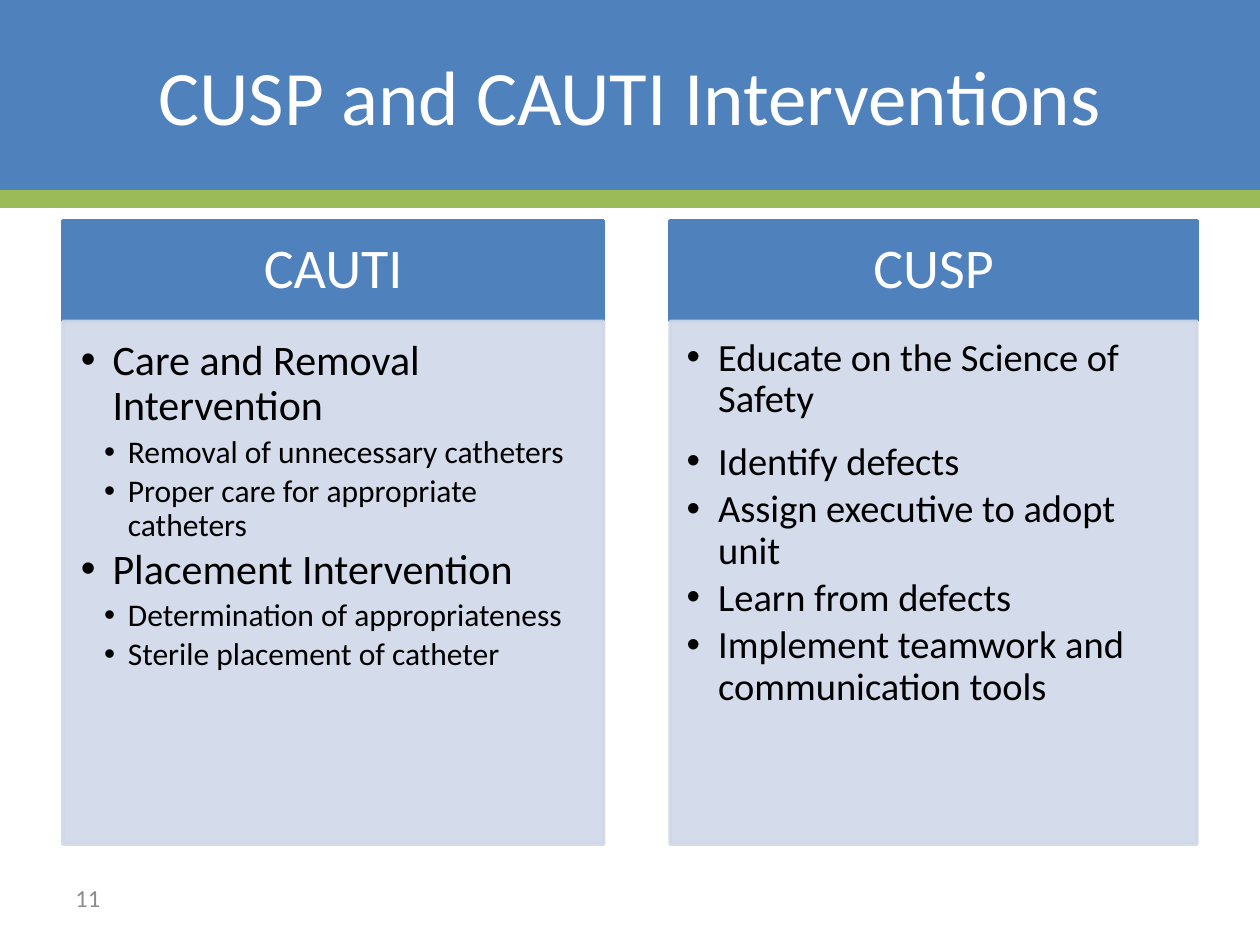
from dataclasses import dataclass

from lxml.etree import SubElement
from pptx import Presentation
from pptx.dml.color import RGBColor
from pptx.enum.shapes import MSO_CONNECTOR, MSO_SHAPE
from pptx.enum.text import MSO_ANCHOR, PP_ALIGN
from pptx.oxml.ns import qn
from pptx.util import Cm, Pt


@dataclass(frozen=True)
class Theme:
    font: str = "Calibri"
    blue: str = "4F81BD"
    green: str = "9BBB59"
    pale: str = "D0D8E8"
    white: str = "FFFFFF"
    black: str = "000000"
    grey: str = "8C8C8C"
    title: int = 44
    heading: int = 32
    number: int = 14
    pale_opacity: int = 90


THEME = Theme()
WIDTH, HEIGHT = 25.4, 19.05
HEAD_TOP, HEAD_HEIGHT = 4.45, 2.01
BODY_TOP, BODY_HEIGHT = 6.48, 10.54
HEAD_INSETS = (0.64, 0.36, 0.64, 0.36)
BOX_INSETS = (0.25, 0.13, 0.25, 0.13)

# Left indent and hanging width of each bullet level, in cm
INDENTS = {1: (0.64, 0.64), 2: (0.95, 0.48)}

# Each item: level, text, size, space after in points (None: 15% of size)
COLUMNS = [
    {"heading": "CAUTI", "left": 1.27, "width": 10.9,
     "insets": (0.36, 0.36, 0.48, 0.53),
     "items": [
         (1, "Care and Removal Intervention", 24, None),
         (2, "Removal of unnecessary catheters", 18, None),
         (2, "Proper care for appropriate catheters", 18, None),
         (1, "Placement Intervention", 24, None),
         (2, "Determination of appropriateness", 18, None),
         (2, "Sterile placement of catheter", 18, None)]},
    {"heading": "CUSP", "left": 13.51, "width": 10.62,
     "insets": (0.33, 0.33, 0.43, 0.48),
     "items": [
         (1, "Educate on the Science of Safety", 22, 12),
         (1, "Identify defects", 22, None),
         (1, "Assign executive to adopt unit", 22, None),
         (1, "Learn from defects", 22, None),
         (1, "Implement teamwork and communication tools", 22, None)]},
]


def apply(target, formats):
    for name, value in formats.items():
        setattr(target, name, value)


def set_opacity(s, percent):
    for color in s._element.spPr.iter(qn("a:srgbClr")):
        SubElement(color, qn("a:alpha"), val=str(percent * 1000))


def add_box(slide, left, top, width, height, color, outlined=True):
    s = slide.shapes.add_shape(MSO_SHAPE.RECTANGLE, Cm(left), Cm(top),
                               Cm(width), Cm(height))
    s.shadow.inherit = False
    s.fill.solid()
    s.fill.fore_color.rgb = RGBColor.from_string(color)
    if outlined:
        s.line.color.rgb = RGBColor.from_string(color)
        s.line.width = Pt(2)
    else:
        s.line.fill.background()
    return s


def add_rule(slide, top, color, points):
    s = slide.shapes.add_connector(MSO_CONNECTOR.STRAIGHT, 0, Cm(top),
                                   Cm(WIDTH), Cm(top))
    s.line.color.rgb = RGBColor.from_string(color)
    s.line.width = Pt(points)
    SubElement(s._element.spPr, qn("a:effectLst"))


def set_frame(tf, insets, anchor):
    sides = ("margin_left", "margin_top", "margin_right", "margin_bottom")
    apply(tf, {"word_wrap": True, "vertical_anchor": anchor,
               **{side: Cm(inset) for side, inset in zip(sides, insets)}})


def write(p, text, size, color, **formats):
    apply(p, formats)
    r = p.add_run()
    r.text = text
    apply(r.font, {"name": THEME.font, "size": Pt(size)})
    r.font.color.rgb = RGBColor.from_string(color)


def add_label(slide, left, top, width, height, text, size, color, align):
    s = slide.shapes.add_textbox(Cm(left), Cm(top), Cm(width), Cm(height))
    set_frame(s.text_frame, BOX_INSETS, MSO_ANCHOR.MIDDLE)
    write(s.text_frame.paragraphs[0], text, size, color, alignment=align)


def set_bullet(p, level):
    left, hanging = INDENTS[level]
    pPr = p._p.get_or_add_pPr()
    pPr.set("marL", str(Cm(left)))
    pPr.set("indent", str(-Cm(hanging)))
    SubElement(pPr, qn("a:buFont"), typeface="Arial")
    SubElement(pPr, qn("a:buChar"), char="•")


def add_bullets(tf, items):
    for i, (level, text, size, after) in enumerate(items):
        p = tf.add_paragraph() if i else tf.paragraphs[0]
        write(p, text, size, THEME.black, level=level,
              alignment=PP_ALIGN.LEFT, line_spacing=0.9,
              space_before=Pt(0), space_after=Pt(after or size * 0.15))
        set_bullet(p, level)


def add_column(slide, heading, left, width, insets, items):
    # Heading bar
    s = add_box(slide, left, HEAD_TOP, width, HEAD_HEIGHT, THEME.blue)
    set_frame(s.text_frame, HEAD_INSETS, MSO_ANCHOR.MIDDLE)
    write(s.text_frame.paragraphs[0], heading, THEME.heading, THEME.white,
          alignment=PP_ALIGN.CENTER, line_spacing=0.9)
    # Bullet panel
    s = add_box(slide, left, BODY_TOP, width, BODY_HEIGHT, THEME.pale)
    set_opacity(s, THEME.pale_opacity)
    set_frame(s.text_frame, insets, MSO_ANCHOR.TOP)
    add_bullets(s.text_frame, items)


def main():
    prs = Presentation()
    apply(prs, {"slide_width": Cm(WIDTH), "slide_height": Cm(HEIGHT)})
    slide = prs.slides.add_slide(prs.slide_layouts[6])

    # Title band
    add_box(slide, 0, 0, WIDTH, 4.01, THEME.blue, outlined=False)
    add_rule(slide, 4.01, THEME.green, 10)
    add_label(slide, 0, 0, WIDTH, 3.81, "CUSP and CAUTI Interventions",
              THEME.title, THEME.white, PP_ALIGN.CENTER)

    # Intervention columns
    for column in COLUMNS:
        add_column(slide, **column)

    # Slide number
    add_label(slide, 1.27, 17.58, 5.92, 1.02, "11",
              THEME.number, THEME.grey, PP_ALIGN.LEFT)

    prs.save("out.pptx")


if __name__ == "__main__":
    main()
